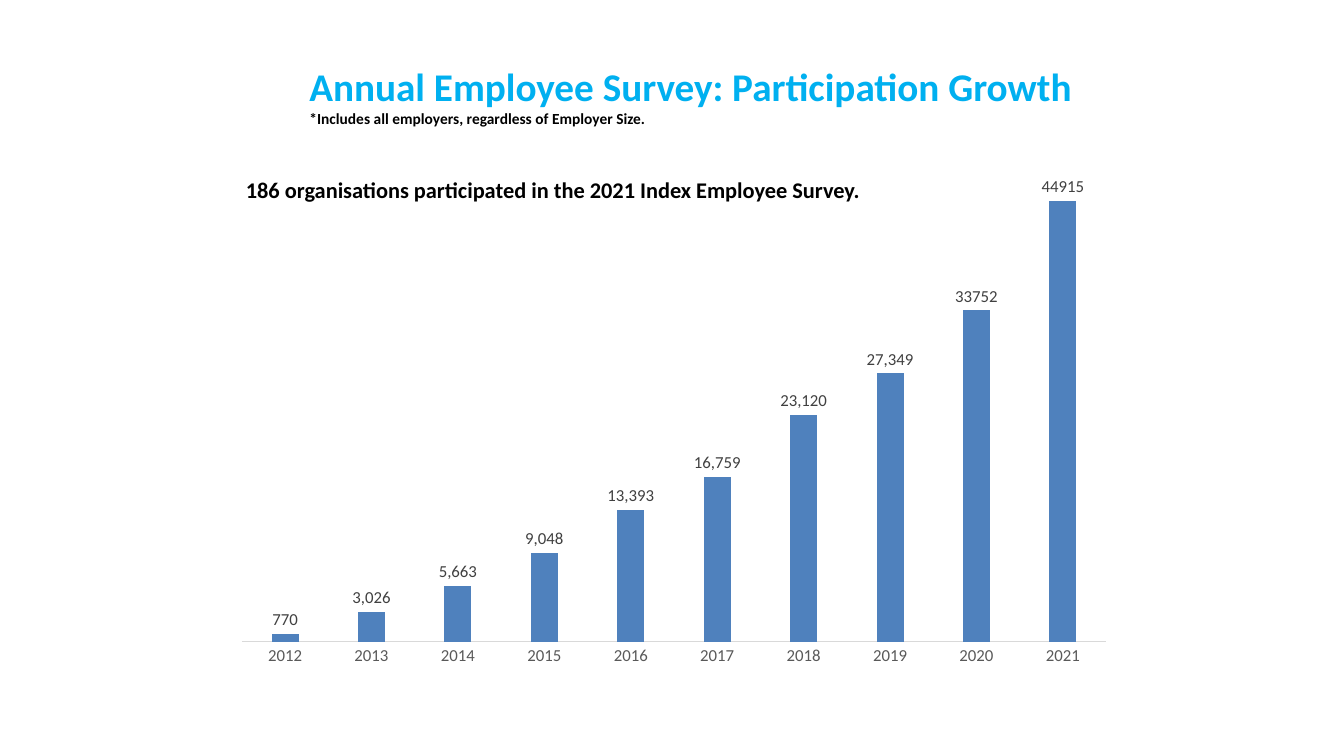
"""Build the employee survey participation slide."""
import pptx
import pptx.chart.data
import pptx.dml.color
import pptx.enum.chart
import pptx.enum.text
import pptx.oxml
import pptx.util

Inches = pptx.util.Inches
Pt = pptx.util.Pt
FONT = "Calibri"
PARTICIPANTS = {
    "2012": 770, "2013": 3026, "2014": 5663, "2015": 9048, "2016": 13393,
    "2017": 16759, "2018": 23120, "2019": 27349, "2020": 33752, "2021": 44915,
}


def colour(value):
    """Return the colour for a hex string."""
    return pptx.dml.color.RGBColor.from_string(value)


def style_font(font, size, value, bold=False):
    """Set the face, size, colour and weight of a font."""
    font.name = FONT
    font.size = Pt(size)
    font.bold = bold
    font.color.rgb = colour(value)


def add_text(page, left, top, width, height, lines, anchor):
    """Add a bold text box with lines given as (text, size, colour)."""
    box = page.shapes.add_textbox(Inches(left), Inches(top), Inches(width), Inches(height))
    frame = box.text_frame
    frame.word_wrap = True
    frame.vertical_anchor = anchor
    para = frame.paragraphs[0]
    for index, (text, size, value) in enumerate(lines):
        if index:
            para.add_line_break()
        span = para.add_run()
        span.text = text
        style_font(span.font, size, value, bold=True)


def set_plot_layout(chart, **fractions):
    """Place the inner plot area by fractions of the chart."""
    area = chart.plots[0]._element.getparent()
    for layout in area.findall(pptx.oxml.ns.qn("c:layout")):
        area.remove(layout)
    places = "".join(f'<c:{name} val="{value}"/>' for name, value in fractions.items())
    area.insert(0, pptx.oxml.parse_xml(
        f'<c:layout {pptx.oxml.ns.nsdecls("c")}><c:manualLayout>'
        '<c:layoutTarget val="inner"/><c:xMode val="edge"/><c:yMode val="edge"/>'
        f'{places}</c:manualLayout></c:layout>'))


def add_growth_chart(page):
    """Add the column chart of participants per year."""
    data = pptx.chart.data.CategoryChartData()
    data.categories = list(PARTICIPANTS)
    data.add_series("Series 1", list(PARTICIPANTS.values()))
    chart = page.shapes.add_chart(
        pptx.enum.chart.XL_CHART_TYPE.COLUMN_CLUSTERED,
        Inches(2.22), Inches(1.39), Inches(8.93), Inches(5.35), data).chart
    chart.has_legend = False
    chart.has_title = False
    style_font(chart.font, 10, "000000")

    years = chart.category_axis
    years.major_tick_mark = pptx.enum.chart.XL_TICK_MARK.NONE
    style_font(years.tick_labels.font, 12, "595959")
    years.format.line.color.rgb = colour("D9D9D9")
    years.format.line.width = Pt(0.75)
    counts = chart.value_axis
    counts.visible = False
    counts.has_major_gridlines = False
    counts.minimum_scale = 0
    counts.maximum_scale = 50000

    plot = chart.plots[0]
    plot.vary_by_categories = False
    plot.gap_width = 219
    plot.overlap = -27
    series = plot.series[0]
    series.format.fill.solid()
    series.format.fill.fore_color.rgb = colour("4F81BD")
    labels = series.data_labels
    labels.show_value = True
    labels.position = pptx.enum.chart.XL_LABEL_POSITION.OUTSIDE_END
    labels.number_format = "[<30000]#,##0;0"
    labels.number_format_is_linked = False
    style_font(labels.font, 12, "404040")
    set_plot_layout(chart, x=0.02, y=0.02, w=0.96, h=0.91)


def main():
    """Build and save the deck."""
    deck = pptx.Presentation()
    deck.slide_width = Inches(13.33)
    deck.slide_height = Inches(7.5)
    page = deck.slides.add_slide(deck.slide_layouts[6])
    anchors = pptx.enum.text.MSO_ANCHOR
    add_text(page, 2.97, 0.32, 9.79, 1.25, [
        ("Annual Employee Survey: Participation Growth", 28, "00B0F0"),
        ("*Includes all employers, regardless of Employer Size.", 11, "000000"),
    ], anchors.MIDDLE)
    add_growth_chart(page)
    add_text(page, 2.34, 1.7, 6.38, 0.37, [
        ("186 organisations participated in the 2021 Index Employee Survey.", 16, "000000"),
    ], anchors.TOP)
    deck.save("out.pptx")


if __name__ == "__main__":
    main()
